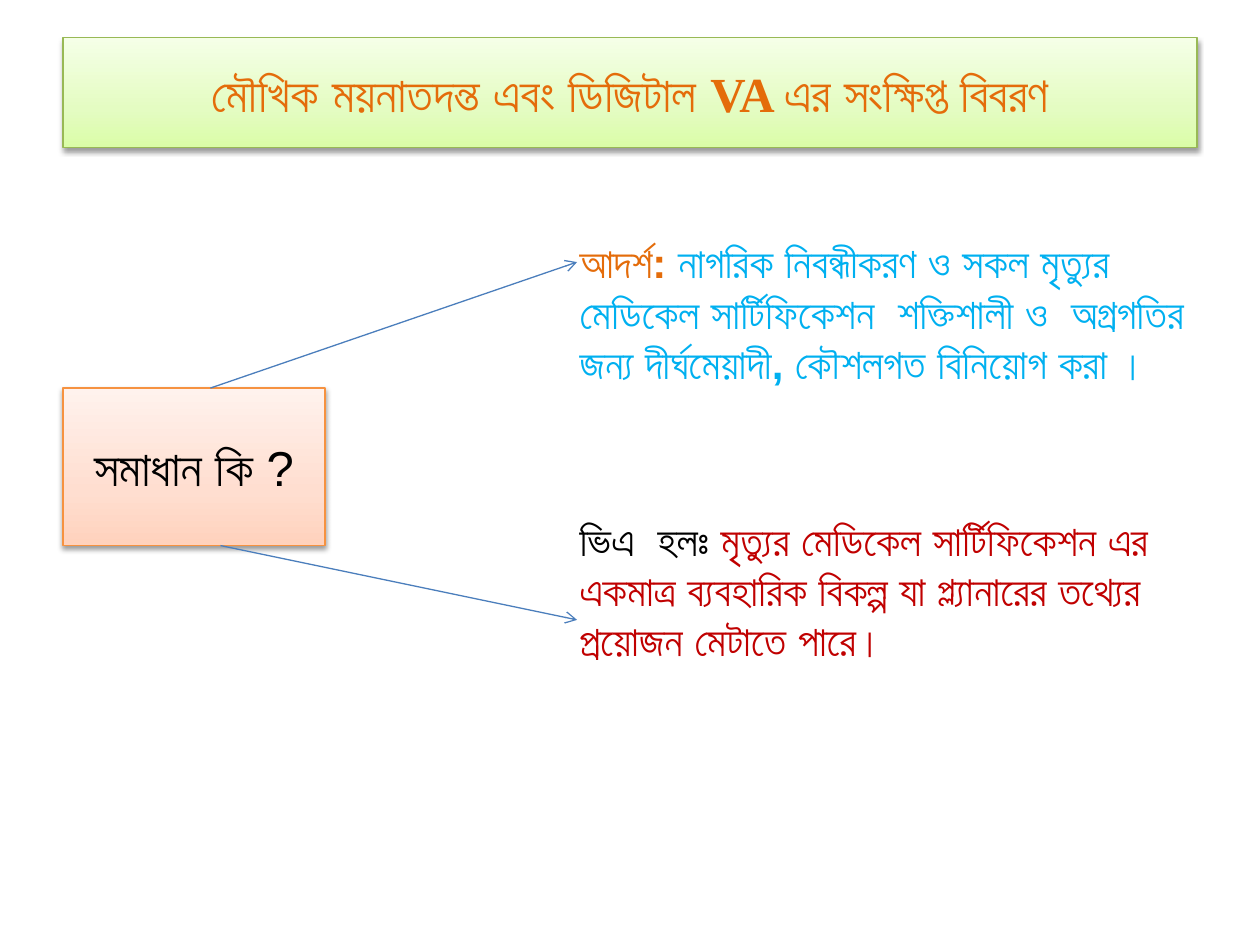
from copy import deepcopy

from pptx import Presentation
from pptx.dml.color import RGBColor
from pptx.enum.shapes import MSO_CONNECTOR, MSO_SHAPE
from pptx.enum.text import MSO_ANCHOR, MSO_AUTO_SIZE, PP_ALIGN
from pptx.oxml import parse_xml
from pptx.oxml.ns import nsdecls, qn
from pptx.oxml.xmlchemy import OxmlElement
from pptx.util import Inches, Pt

BLACK = RGBColor(0x00, 0x00, 0x00)
ORANGE = RGBColor(0xE4, 0x6C, 0x0A)
SKY = RGBColor(0x00, 0xB0, 0xF0)
RED = RGBColor(0xC0, 0x00, 0x00)
CONNECTOR_BLUE = RGBColor(0x4B, 0x7E, 0xBC)
GREEN_LINE = RGBColor(0x98, 0xB9, 0x55)
ORANGE_LINE = RGBColor(0xF6, 0x92, 0x40)
GREENS = [RGBColor(0xDA, 0xFD, 0xA7), RGBColor(0xE4, 0xFC, 0xC2), RGBColor(0xF5, 0xFF, 0xE7)]
PEACHES = [RGBColor(0xFF, 0xD2, 0xBD), RGBColor(0xFF, 0xDE, 0xD0), RGBColor(0xFF, 0xF2, 0xED)]
SHADOW = f"""<a:outerShdw {nsdecls('a')} blurRad="40000" dist="20000" dir="5400000" rotWithShape="0">
<a:srgbClr val="000000"><a:alpha val="38000"/></a:srgbClr></a:outerShdw>"""


def style_panel(shape, colors, line_color):
    """Three-stop vertical gradient, thin outline and soft shadow."""
    shape.fill.gradient()
    shape.fill.gradient_angle = 90
    stop_list = shape._element.spPr.find(".//" + qn("a:gsLst"))
    stop_list.insert(1, deepcopy(stop_list[0]))
    for stop, position, color in zip(shape.fill.gradient_stops, (0, 0.35, 1), colors):
        stop.position = position
        stop.color.rgb = color
    shape.line.color.rgb = line_color
    shape.line.width = Pt(0.75)
    shape.shadow.inherit = False
    shape._element.spPr.find(qn("a:effectLst")).append(parse_xml(SHADOW))


def add_runs(paragraph, size, runs):
    for text, color, bold, font_name in runs:
        run = paragraph.add_run()
        run.text = text
        run.font.size = Pt(size)
        run.font.bold = bold
        run.font.color.rgb = color
        run.font.name = font_name
        complex_font = OxmlElement("a:cs")
        complex_font.set("typeface", font_name)
        run.font._element.append(complex_font)


presentation = Presentation()
presentation.slide_width, presentation.slide_height = Inches(10), Inches(7.5)
slide = presentation.slides.add_slide(presentation.slide_layouts[1])
title, body = slide.placeholders
margin = Inches(0.5)

# Title banner
title.left, title.top = margin, Inches(0.3)
title.width, title.height = presentation.slide_width - 2 * margin, Inches(0.87)
style_panel(title, GREENS, GREEN_LINE)
title.text_frame.auto_size = MSO_AUTO_SIZE.NONE
title.text_frame.vertical_anchor = MSO_ANCHOR.MIDDLE
title.text_frame.paragraphs[0].alignment = PP_ALIGN.CENTER
add_runs(title.text_frame.paragraphs[0], 28, [
    ("মৌখিক ময়নাতদন্ত এবং ডিজিটাল ", ORANGE, True, "Arial"),
    ("VA ", ORANGE, True, "Times New Roman"),
    ("এর সংক্ষিপ্ত বিবরণ", ORANGE, True, "Arial"),
])

# The two answers, set apart by paragraph spacing
body.left, body.top = Inches(4.5), Inches(1.83)
body.width, body.height = Inches(5.17), Inches(4.87)
body.text_frame.auto_size = MSO_AUTO_SIZE.NONE
answers = [
    (5, [("আদর্শ: ", ORANGE, True, "Arial"),
         ("নাগরিক নিবন্ধীকরণ ও সকল মৃত্যুর মেডিকেল সার্টিফিকেশন  শক্তিশালী ও  অগ্রগতির "
          "জন্য দীর্ঘমেয়াদী, কৌশলগত বিনিয়োগ করা ।", SKY, True, "Arial")]),
    (72, [("ভিএ  হলঃ ", BLACK, True, "Arial"),
          ("মৃত্যুর মেডিকেল সার্টিফিকেশন এর একমাত্র ব্যবহারিক বিকল্প যা প্ল্যানারের তথ্যের "
           "প্রয়োজন মেটাতে পারে।", RED, False, "Arial")]),
]
body.text_frame.text = "\n" * (len(answers) - 1)
for paragraph, (space_before, runs) in zip(body.text_frame.paragraphs, answers):
    paragraph.space_before = Pt(space_before)
    properties = paragraph._p.get_or_add_pPr()
    properties.set("marL", "0")
    properties.set("indent", "0")
    properties.append(OxmlElement("a:buNone"))
    add_runs(paragraph, 24, runs)

# Question box
question = slide.shapes.add_shape(
    MSO_SHAPE.RECTANGLE, margin, Inches(3.08), Inches(2.08), Inches(1.25))
style_panel(question, PEACHES, ORANGE_LINE)
question.text_frame.word_wrap = True
question.text_frame.vertical_anchor = MSO_ANCHOR.MIDDLE
question.text_frame.paragraphs[0].alignment = PP_ALIGN.CENTER
add_runs(question.text_frame.paragraphs[0], 28, [("সমাধান কি ?", BLACK, False, "Arial")])

# Arrows from the question to each answer
for start_x, start_y, end_y in [
    (1.75, question.top + question.height, 4.92),
    (1.67, question.top, 2.08),
]:
    arrow = slide.shapes.add_connector(
        MSO_CONNECTOR.STRAIGHT, Inches(start_x), start_y, Inches(4.58), Inches(end_y))
    arrow.line.color.rgb = CONNECTOR_BLUE
    arrow.line.width = Pt(0.75)
    arrow_head = OxmlElement("a:tailEnd")
    arrow_head.set("type", "arrow")
    arrow.line._get_or_add_ln().append(arrow_head)
    arrow._element.spPr.append(OxmlElement("a:effectLst"))

presentation.save("out.pptx")
